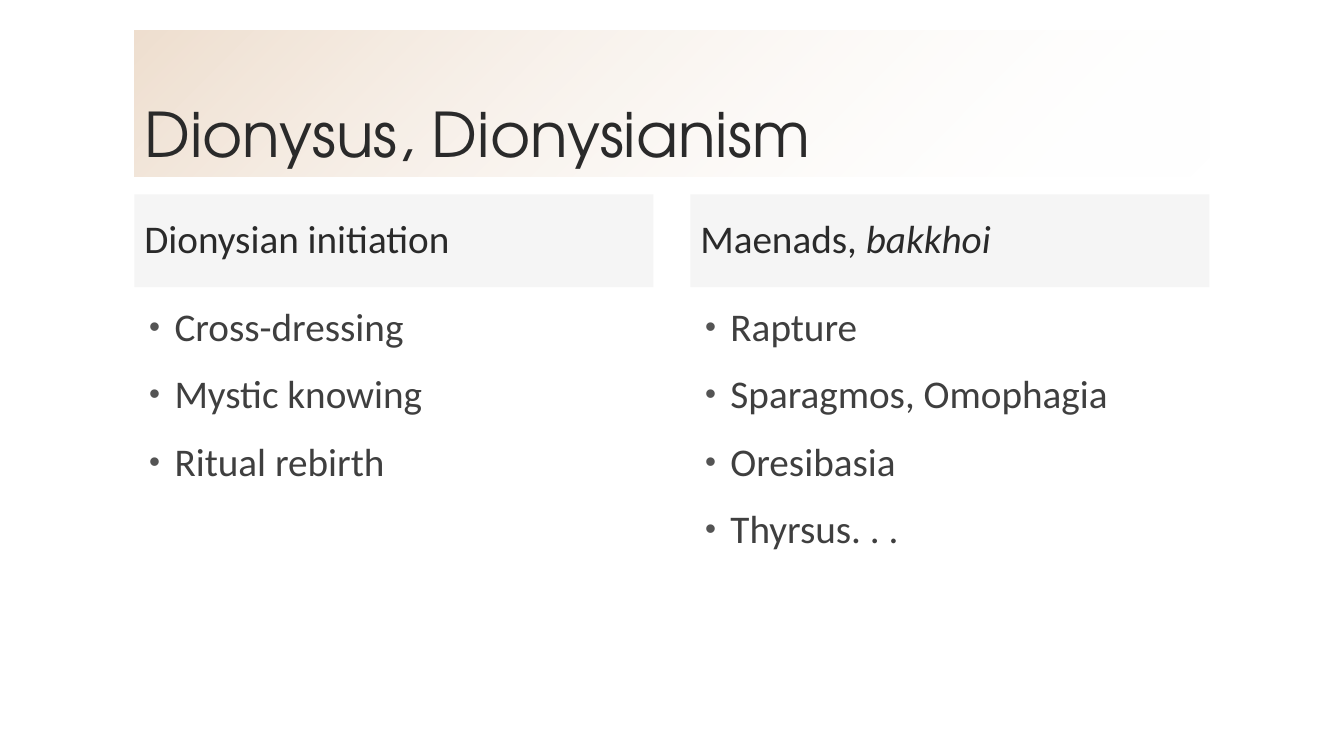
"""Build the slide on Dionysus and Dionysianism."""
from lxml import etree
from pptx import Presentation
from pptx import util as u
from pptx.dml.color import RGBColor
from pptx.enum import shapes, text
from pptx.oxml.ns import qn

COLORS = {"sand": "CE9F71", "white": "FFFFFF", "gray": "BFBFBF",
          "heading": "2A2A2A", "body": "3F3F3F", "bullet": "545454"}
LEFT, WIDTH = 3.39, 27.09
COLUMN_WIDTH = 13.08
COLUMN_STEP = WIDTH - COLUMN_WIDTH

columns = [
    ([("Dionysian initiation", False)],
     ["Cross-dressing", "Mystic knowing", "Ritual rebirth"]),
    ([("Maenads, ", False), ("bakkhoi", True)],
     ["Rapture", "Sparagmos, Omophagia", "Oresibasia", "Thyrsus. . ."]),
]


def add_panel(left, top, width, height, anchor):
    panel = slide.shapes.add_shape(shapes.MSO_SHAPE.RECTANGLE, u.Cm(left),
                                   u.Cm(top), u.Cm(width), u.Cm(height))
    panel.shadow.inherit = False
    panel.line.fill.background()
    panel.fill.background()
    panel.text_frame.word_wrap = True
    panel.text_frame.vertical_anchor = anchor
    return panel


def add_words(paragraph, runs, size, font, color):
    paragraph.alignment = text.PP_ALIGN.LEFT
    paragraph.line_spacing = 0.9
    for words, italic in runs:
        run = paragraph.add_run()
        run.text = words
        run.font.size = u.Pt(size)
        run.font.name = font
        run.font.italic = italic
        run.font.color.rgb = RGBColor.from_string(COLORS[color])


deck = Presentation()
deck.slide_width, deck.slide_height = u.Cm(33.87), u.Cm(19.05)
slide = deck.slides.add_slide(deck.slide_layouts[6])

title = add_panel(LEFT, 0.76, WIDTH, 3.68, text.MSO_ANCHOR.BOTTOM)
title.fill.gradient()
title.fill.gradient_angle = 315
fade = [("sand", 0, 34), ("white", 1, 0)]
for stop, (color, position, opacity) in zip(title.fill.gradient_stops, fade):
    stop.color.rgb = RGBColor.from_string(COLORS[color])
    stop.position = position
tints = list(title.element.spPr.iter(qn("a:srgbClr")))
for tint, (color, position, opacity) in zip(tints, fade):
    etree.SubElement(tint, qn("a:alpha"), val=str(opacity * 1000))
add_words(title.text_frame.paragraphs[0], [("Dionysus, Dionysianism", False)],
          44, "TeX Gyre Adventor", "heading")

for column, (heading_runs, points) in enumerate(columns):
    left = LEFT + column * COLUMN_STEP

    heading = add_panel(left, 4.9, COLUMN_WIDTH, 2.34, text.MSO_ANCHOR.MIDDLE)
    heading.fill.solid()
    heading.fill.fore_color.rgb = RGBColor.from_string(COLORS["gray"])
    tint = next(heading.element.spPr.iter(qn("a:srgbClr")))
    etree.SubElement(tint, qn("a:alpha"), val="15000")
    add_words(heading.text_frame.paragraphs[0], heading_runs,
              28, "Calibri", "heading")

    point_list = slide.shapes.add_textbox(u.Cm(left), u.Cm(7.62),
                                          u.Cm(COLUMN_WIDTH), u.Cm(9.53))
    frame = point_list.text_frame
    frame.word_wrap = True
    for index, point in enumerate(points):
        paragraph = frame.add_paragraph() if index else frame.paragraphs[0]
        add_words(paragraph, [(point, False)], 28, "Calibri", "body")
        paragraph.space_before = u.Pt(18)
        properties = paragraph._p.get_or_add_pPr()
        properties.set("marL", str(u.Cm(0.76)))
        properties.set("indent", str(-u.Cm(0.64)))
        bullet_color = etree.SubElement(properties, qn("a:buClr"))
        etree.SubElement(bullet_color, qn("a:srgbClr"), val=COLORS["bullet"])
        etree.SubElement(properties, qn("a:buSzPct"), val="80000")
        etree.SubElement(properties, qn("a:buFont"), typeface="Arial")
        etree.SubElement(properties, qn("a:buChar"), char="•")

deck.save("out.pptx")
